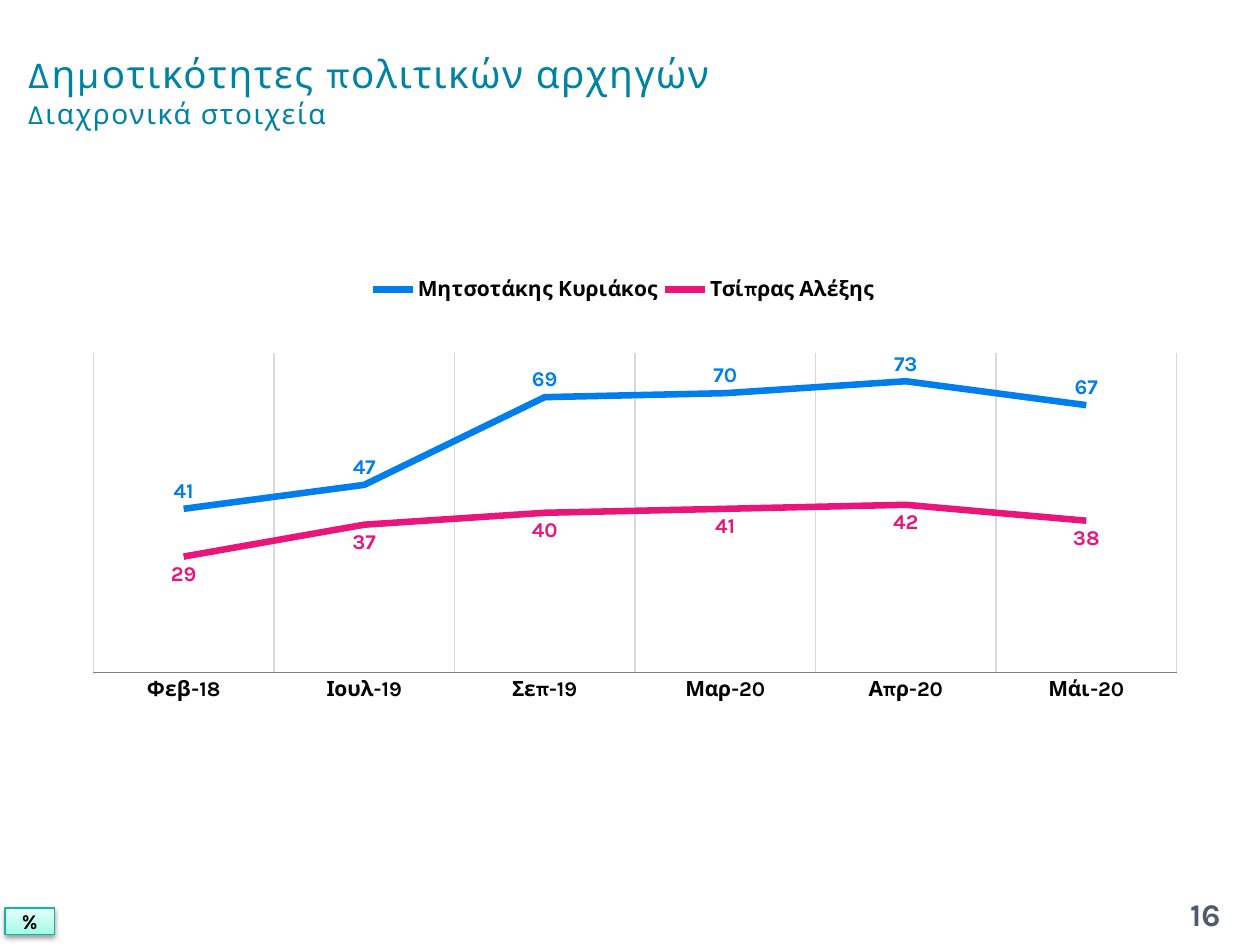
from pptx import Presentation
from pptx.chart.data import CategoryChartData
from pptx.dml.color import RGBColor
from pptx.enum.chart import XL_CHART_TYPE as ChartType
from pptx.enum.chart import XL_LABEL_POSITION as LabelPosition
from pptx.enum.chart import XL_LEGEND_POSITION as LegendPosition
from pptx.enum.chart import XL_TICK_MARK as TickMark
from pptx.enum.shapes import MSO_SHAPE as Preset
from pptx.enum.text import MSO_ANCHOR as Anchor
from pptx.enum.text import PP_ALIGN as Align
from pptx.oxml import parse_xml
from pptx.oxml.ns import nsdecls, qn
from pptx.util import Inches, Pt

COLORS = {
    "title": "0082A5",
    "number": "4E5B6F",
    "black": "000000",
    "grid": "D9D9D9",
    "axis": "808080",
    "blue": "007EEB",
    "pink": "EA157A",
    "badge_line": "16B39E",
}
BADGE_STOPS = {0: "9DFDE8", 35: "BBFCED", 100: "E4FFF9"}
MONTHS = ["Φεβ-18", "Ιουλ-19", "Σεπ-19", "Μαρ-20", "Απρ-20", "Μάι-20"]
LEADERS = [
    ("Μητσοτάκης Κυριάκος", [41, 47, 69, 70, 73, 67], "blue", LabelPosition.ABOVE),
    ("Τσίπρας Αλέξης", [29, 37, 40, 41, 42, 38], "pink", LabelPosition.BELOW),
]


def color(name):
    return RGBColor.from_string(COLORS[name])


def style_font(font, size, ink="black", bold=False):
    font.name = "Karla"
    font.size = Pt(size)
    font.bold = bold
    font.color.rgb = color(ink)


def write_text(paragraph, text, size, ink="black", bold=False, align=None, spacing=0):
    run = paragraph.add_run()
    run.text = text
    style_font(run.font, size, ink, bold)
    if spacing:
        run.font._element.set("spc", str(spacing * 100))
    if align is not None:
        paragraph.alignment = align


def place_layout(parent, index, x, y, width, height, inner=False):
    for layout in parent.findall(qn("c:layout")):
        parent.remove(layout)
    target = '<c:layoutTarget val="inner"/>' if inner else ""
    parent.insert(index, parse_xml(
        f'<c:layout {nsdecls("c")}><c:manualLayout>{target}'
        '<c:xMode val="edge"/><c:yMode val="edge"/>'
        f'<c:x val="{x}"/><c:y val="{y}"/><c:w val="{width}"/><c:h val="{height}"/>'
        '</c:manualLayout></c:layout>'))


class PollSlide:
    def __init__(self, presentation):
        self.width = presentation.slide_width
        self.height = presentation.slide_height
        self.slide = presentation.slides.add_slide(presentation.slide_layouts[5])

    def box(self, left, top, width, height):
        return (int(left * self.width), int(top * self.height),
                int(width * self.width), int(height * self.height))

    def title(self, heading, subheading, *area):
        shape = self.slide.shapes.title
        shape.left, shape.top, shape.width, shape.height = self.box(*area)
        shape.text_frame.vertical_anchor = Anchor.MIDDLE
        paragraph = shape.text_frame.paragraphs[0]
        write_text(paragraph, heading, 22, "title", align=Align.LEFT, spacing=1)
        paragraph.add_line_break()
        write_text(paragraph, subheading, 16, "title", spacing=1)

    def number(self, text, *area):
        frame = self.slide.shapes.add_textbox(*self.box(*area)).text_frame
        frame.word_wrap = True
        frame.vertical_anchor = Anchor.MIDDLE
        write_text(frame.paragraphs[0], text, 18, "number", True, Align.CENTER)

    def badge(self, text, *area):
        shape = self.slide.shapes.add_shape(Preset.RECTANGLE, *self.box(*area))
        shape.line.color.rgb = color("badge_line")
        shape.line.width = Pt(0.75)
        stops = "".join(f'<a:gs pos="{share * 1000}"><a:srgbClr val="{tint}"/></a:gs>'
                        for share, tint in BADGE_STOPS.items())
        properties = shape._element.spPr
        properties.find(qn("a:ln")).addprevious(parse_xml(
            f'<a:gradFill {nsdecls("a")}><a:gsLst>{stops}</a:gsLst>'
            '<a:lin ang="16200000" scaled="0"/></a:gradFill>'))
        properties.append(parse_xml(
            f'<a:effectLst {nsdecls("a")}><a:outerShdw blurRad="{Pt(3.1)}" '
            f'dist="{Pt(1.6)}" dir="5400000" rotWithShape="0">'
            f'<a:srgbClr val="{COLORS["black"]}"><a:alpha val="38000"/></a:srgbClr>'
            '</a:outerShdw></a:effectLst>'))
        frame = shape.text_frame
        frame.margin_top = frame.margin_bottom = 0
        frame.vertical_anchor = Anchor.MIDDLE
        write_text(frame.paragraphs[0], text, 12, bold=True, align=Align.CENTER)

    def line_chart(self, categories, leaders, *area):
        data = CategoryChartData(number_format="#,##0")
        data.categories = categories
        for name, values, *_ in leaders:
            data.add_series(name, values)
        chart = self.slide.shapes.add_chart(ChartType.LINE, *self.box(*area), data).chart
        chart.has_title = False
        style_font(chart.font, 18)
        self.format_axes(chart)
        self.format_legend(chart)
        place_layout(chart._chartSpace.chart.plotArea, 0, 0.017, 0.187, 0.966, 0.607, True)
        for series, (_, _, ink, position) in zip(chart.plots[0].series, leaders):
            series.smooth = False
            series.format.line.color.rgb = color(ink)
            series.format.line.width = Pt(3.75)
            labels = series.data_labels
            labels.show_value = True
            labels.number_format = "#,##0"
            labels.number_format_is_linked = False
            labels.position = position
            style_font(labels.font, 12, ink, True)

    def format_axes(self, chart):
        months = chart.category_axis
        months.major_tick_mark = TickMark.NONE
        months.has_major_gridlines = True
        months.major_gridlines.format.line.color.rgb = color("grid")
        months.major_gridlines.format.line.width = Pt(0.75)
        months.format.line.color.rgb = color("axis")
        style_font(months.tick_labels.font, 12, bold=True)
        values = chart.value_axis
        values.minimum_scale, values.maximum_scale, values.major_unit = 0, 80, 10
        values.has_major_gridlines = False
        values.visible = False

    def format_legend(self, chart):
        chart.has_legend = True
        legend = chart.legend
        legend.position = LegendPosition.BOTTOM
        legend.include_in_layout = False
        style_font(legend.font, 12, bold=True)
        place_layout(legend._element, 1, 0.26, 0.03, 0.46, 0.07)


def main():
    presentation = Presentation()
    presentation.slide_width, presentation.slide_height = Inches(10), Inches(7.5)
    poll = PollSlide(presentation)
    poll.line_chart(MONTHS, LEADERS, 0.059, 0.27, 0.89, 0.556)
    poll.title("Δημοτικότητες πολιτικών αρχηγών", "Διαχρονικά στοιχεία",
               0.012, 0.017, 0.685, 0.157)
    poll.number("16", 0.917, 0.941, 0.079, 0.053)
    poll.badge("%", 0.004, 0.961, 0.039, 0.028)
    presentation.save("out.pptx")


if __name__ == "__main__":
    main()
